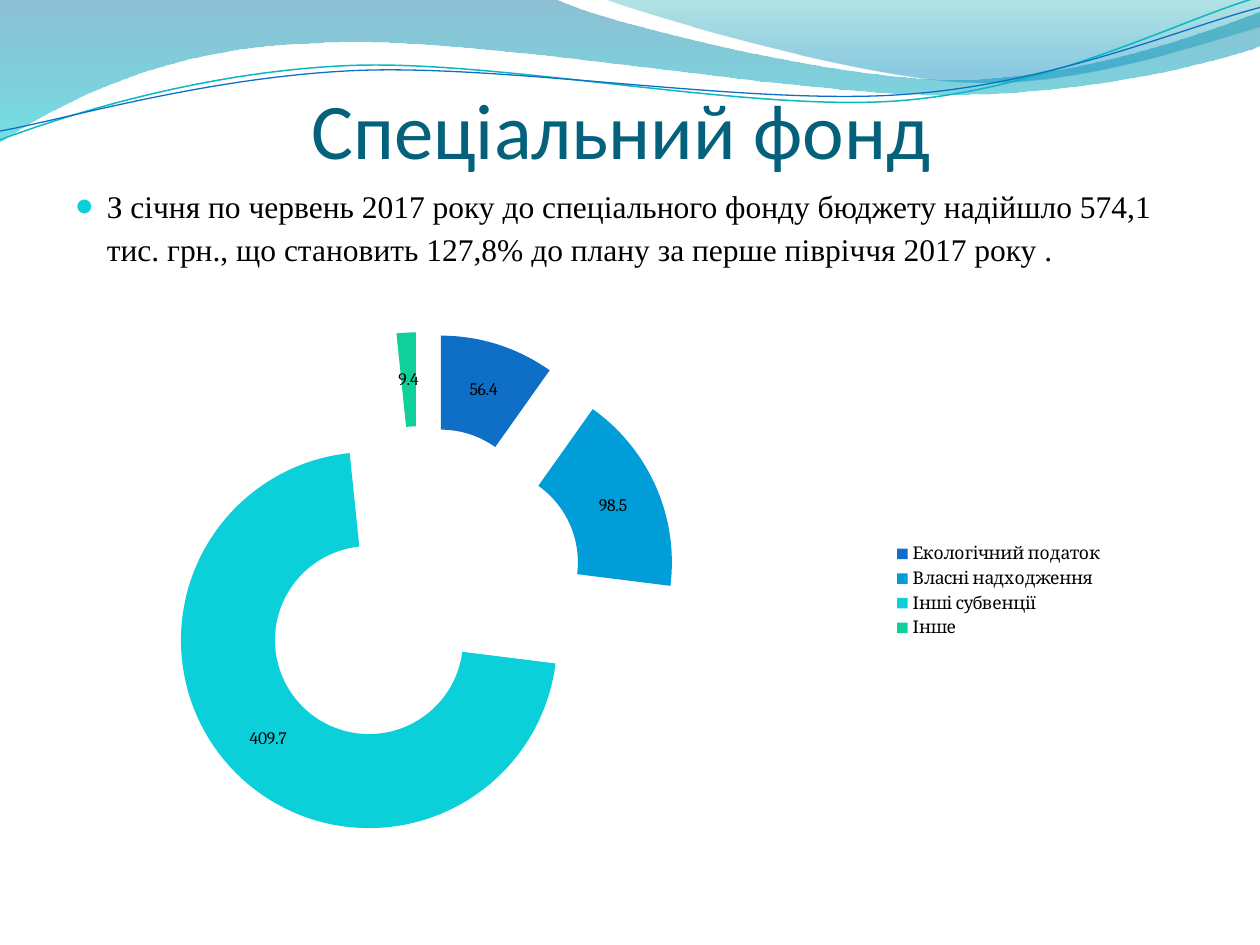
from math import cos, radians, sin

from lxml import etree
from pptx import Presentation
from pptx.chart.data import CategoryChartData
from pptx.dml.color import RGBColor
from pptx.enum.chart import XL_CHART_TYPE, XL_LEGEND_POSITION
from pptx.enum.text import MSO_ANCHOR, PP_ALIGN
from pptx.oxml import parse_xml
from pptx.oxml.ns import nsdecls, qn
from pptx.util import Inches, Pt

RING = XL_CHART_TYPE.DOUGHNUT
RIGHT = XL_LEGEND_POSITION.RIGHT
BOTTOM = MSO_ANCHOR.BOTTOM
CENTER = PP_ALIGN.CENTER

COLORS = {
    "title": "04617B", "text": "000000", "bullet": "0BD0D9",
    "teal": "0AB8BF", "blue": "0F6FC6",
}
TILT = -2.7
# Each wave is a start point, then steps: 2 numbers for a line, 6 for a curve.
# Gradient stops: position %, colour, opacity %.
BANDS = [
    ([(0, 0), (4.4, -0.01), (4.76, 0.17, 6.64, 0.63, 7.58, 0.63),
      (8.53, 0.63, 9.58, 0.26, 10, 0.09), (10.01, 0.36),
      (9.83, 0.44, 8.7, 0.76, 7.46, 0.75), (6.22, 0.75, 3.82, 0.28, 2.57, 0.34),
      (1.29, 0.36, 0.46, 0.83, -0.01, 1.13), (0, 0)],
     [(0, "0074A1", 45), (100, "00C6CF", 55)]),
    ([(4.79, -0.01), (5.09, 0.11, 6.82, 0.62, 7.69, 0.65),
      (8.56, 0.69, 9.61, 0.32, 10, 0.21), (10, 0), (4.79, -0.01)],
     [(0, "00A1A9", 30), (80, "008BBF", 45)]),
]
# Tilted strands: path, centre of the turn, colour, width.
STRANDS = [
    ([(0, 1.11), (0.48, 0.93, 1.58, 0.57, 2.77, 0.52),
      (3.95, 0.47, 5.93, 0.89, 7.13, 0.8), (8.33, 0.71, 9.38, 0.15, 9.98, -0.02)],
     (4.99, 0.57), "teal", 0.85),
    ([(0, 1.04), (0.47, 0.96, 1.64, 0.61, 2.83, 0.56),
      (4.03, 0.51, 5.97, 0.84, 7.17, 0.75), (8.36, 0.67, 9.41, 0.21, 10, 0.06)],
     (5, 0.59), "blue", 0.75),
]
SHARES = [
    ("Екологічний податок", 56.4, "0F6FC6"),
    ("Власні надходження", 98.5, "009DD9"),
    ("Інші субвенції", 409.7, "0BD0D9"),
    ("Інше", 9.4, "10CF9B"),
]


def rgb(name):
    return RGBColor.from_string(COLORS[name])


def turn(step, mid, angle):
    """Turn every point of a step around mid."""
    c, s = cos(radians(angle)), sin(radians(angle))
    spots = []
    for x, y in zip(step[::2], step[1::2]):
        dx, dy = x - mid[0], y - mid[1]
        spots += [mid[0] + dx * c - dy * s, mid[1] + dx * s + dy * c]
    return spots


def add_wave(slide, left, top, path, close):
    """Draw a path, joining the three points of each curve step into a Bezier."""
    points = [(Inches(left + x), Inches(top + y))
              for step in path for x, y in zip(step[::2], step[1::2])]
    pen = slide.shapes.build_freeform(*points[0])
    pen.add_line_segments(points[1:], close=close)
    wave = pen.convert_to_shape()
    wave.shadow.inherit = False
    lines = wave._element.findall(".//" + qn("a:lnTo"))
    for step in path[1:]:
        part, lines = lines[:len(step) // 2], lines[len(step) // 2:]
        if len(part) == 3:
            curve = etree.Element(qn("a:cubicBezTo"))
            part[0].addprevious(curve)
            for line in part:
                curve.append(line[0])
                line.getparent().remove(line)
    return wave


def shade(shape, stops):
    """Fill from top to bottom with translucent colours."""
    marks = "".join(
        f'<a:gs pos="{pos * 1000}"><a:srgbClr val="{color}">'
        f'<a:alpha val="{alpha * 1000}"/></a:srgbClr></a:gs>'
        for pos, color, alpha in stops)
    fill = parse_xml(f'<a:gradFill {nsdecls("a")} rotWithShape="1"><a:gsLst>{marks}'
                     '</a:gsLst><a:lin ang="5400000" scaled="0"/></a:gradFill>')
    shape._element.spPr.find(qn("a:custGeom")).addnext(fill)


def add_waves(slide, left, top):
    for path, stops in BANDS:
        band = add_wave(slide, left, top, path, True)
        shade(band, stops)
        band.line.fill.background()
    for path, mid, color, width in STRANDS:
        level = [turn(step, mid, -TILT) for step in path]
        strand = add_wave(slide, left, top, level, False)
        strand.rotation = TILT
        strand.fill.background()
        strand.line.color.rgb = rgb(color)
        strand.line.width = Pt(width)


def add_text(slide, box, words, font, size, color):
    frame = slide.shapes.add_textbox(*map(Inches, box)).text_frame
    frame.word_wrap = True
    run = frame.paragraphs[0].add_run()
    run.text = words
    run.font.name, run.font.size = font, Pt(size)
    run.font.color.rgb = rgb(color)
    return frame


def add_title(slide, box):
    frame = add_text(slide, box, "Спеціальний фонд ", "Calibri", 45, "title")
    frame.margin_left = frame.margin_right = frame.margin_bottom = 0
    frame.vertical_anchor = BOTTOM
    frame.paragraphs[0].alignment = CENTER


def add_body(slide, box):
    frame = add_text(
        slide, box,
        "З січня по червень 2017 року до спеціального фонду бюджету надійшло 574,1 "
        "тис. грн., що становить 127,8% до плану за перше півріччя 2017 року .",
        "Times New Roman", 18, "text")
    para = frame.paragraphs[0]
    para.line_spacing = 1.15
    para.space_before, para.space_after = Pt(3.6), Pt(10)
    props = para._p.get_or_add_pPr()
    props.set("marL", str(Inches(0.25)))
    props.set("indent", str(-Inches(0.25)))
    tint = etree.SubElement(props, qn("a:buClr"))
    etree.SubElement(tint, qn("a:srgbClr"), val=COLORS["bullet"])
    etree.SubElement(props, qn("a:buSzPct"), val="95000")
    etree.SubElement(props, qn("a:buFont"), typeface="Calibri")
    etree.SubElement(props, qn("a:buChar"), char="●")


def place_plot(chart, **sides):
    """Fix the inner plot area as fractions of the chart."""
    area = chart._chartSpace.chart.plotArea
    for old in area.findall(qn("c:layout")):
        area.remove(old)
    marks = "".join(f'<c:{side} val="{size}"/>' for side, size in sides.items())
    area.insert(0, parse_xml(
        f'<c:layout {nsdecls("c")}><c:manualLayout><c:layoutTarget val="inner"/>'
        f'<c:xMode val="edge"/><c:yMode val="edge"/>{marks}</c:manualLayout></c:layout>'))


def add_ring(slide, box):
    data = CategoryChartData()
    data.categories = [name for name, _, _ in SHARES]
    data.add_series("Series 1", [value for _, value, _ in SHARES])
    chart = slide.shapes.add_chart(RING, *map(Inches, box), data).chart
    chart.has_title = False
    chart.font.name, chart.font.size = "Cambria", Pt(10)
    chart.font.color.rgb = rgb("text")
    chart.has_legend = True
    chart.legend.position = RIGHT
    chart.legend.include_in_layout = False
    place_plot(chart, x=0.065, y=0, w=0.506, h=1)

    plot = chart.plots[0]
    plot.vary_by_categories = True
    plot.has_data_labels = True
    plot.data_labels.show_value = True
    plot.data_labels.show_percentage = False
    series = plot.series[0]
    for i, (_, _, color) in enumerate(SHARES):
        fill = series.points[i].format.fill
        fill.solid()
        fill.fore_color.rgb = RGBColor.from_string(color)
    gap = parse_xml(f'<c:explosion {nsdecls("c")} val="75"/>')
    series._element.find(qn("c:dPt")).addprevious(gap)


def main():
    deck = Presentation()
    deck.slide_width, deck.slide_height = Inches(10), Inches(7.5)
    slide = deck.slides.add_slide(deck.slide_layouts[6])
    add_waves(slide, 0, 0)
    add_title(slide, (0.5, 0.77, 9, 0.62))
    add_body(slide, (0.5, 1.39, 9, 5.53))
    add_ring(slide, (0.75, 2.25, 8.11, 4.88))
    deck.save("out.pptx")


if __name__ == "__main__":
    main()
